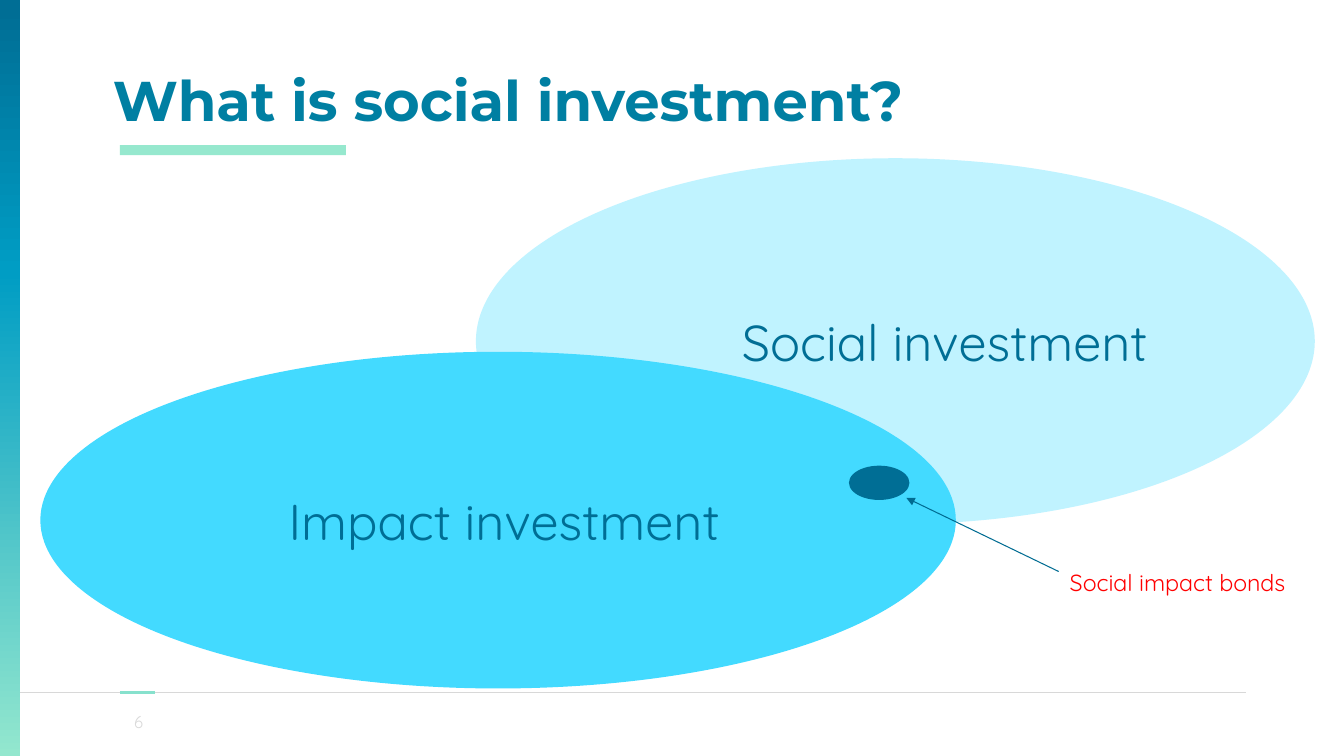
from lxml import etree
from pptx import Presentation
from pptx.dml.color import RGBColor
from pptx.enum import shapes, text
from pptx.oxml import parse_xml
from pptx.oxml.ns import nsdecls, qn
from pptx.util import Inches, Pt

TEAL = RGBColor(0x00, 0x7F, 0xA2)
DEEP = RGBColor(0x00, 0x6E, 0x95)
ARROW = RGBColor(0x00, 0x6C, 0x92)
PALE = RGBColor(0xC0, 0xF3, 0xFF)
SKY = RGBColor(0x43, 0xDA, 0xFF)
MINT = RGBColor(0x96, 0xE8, 0xCE)
MINT_DARK = RGBColor(0x87, 0xE1, 0xCD)
GREY = RGBColor(0xD8, 0xD8, 0xD8)
PAGE_GREY = RGBColor(0xD9, 0xD9, 0xD9)
RED = RGBColor(0xFF, 0x00, 0x00)
BAR_STOPS = [(0, RGBColor(0x93, 0xE7, 0xCE)), (64, RGBColor(0x00, 0x9D, 0xC4)), (99, DEEP), (100, DEEP)]

LEFT, CENTER = text.PP_ALIGN.LEFT, text.PP_ALIGN.CENTER
TOP, MIDDLE, BOTTOM = text.MSO_ANCHOR.TOP, text.MSO_ANCHOR.MIDDLE, text.MSO_ANCHOR.BOTTOM


def add_block(s, kind, box, color):
    sp = s.shapes.add_shape(kind, *map(Inches, box))
    sp.shadow.inherit = False
    sp.fill.solid()
    sp.fill.fore_color.rgb = color
    sp.line.fill.background()
    return sp


def add_line(s, start, end, color, width):
    line = s.shapes.add_connector(shapes.MSO_CONNECTOR.STRAIGHT, *map(Inches, start + end))
    line.line.color.rgb = color
    line.line.width = Pt(width)
    etree.SubElement(line._element.spPr, qn("a:effectLst"))
    return line


def set_text(sp, words, size, color, font="Quicksand", align=LEFT, anchor=TOP,
             left=0.1, margin=0.05):
    tf = sp.text_frame
    tf.word_wrap = True
    tf.vertical_anchor = anchor
    tf.margin_left, tf.margin_right = Inches(left), Inches(0.1)
    tf.margin_top = tf.margin_bottom = Inches(margin)
    p = tf.paragraphs[0]
    p.text = words
    p.alignment = align
    p.font.name = font
    p.font.size = Pt(size)
    p.font.color.rgb = color
    return p


def add_text(s, box, *args, **kwargs):
    return set_text(s.shapes.add_textbox(*map(Inches, box)), *args, **kwargs)


def add_side_bar(s, box):
    bar = add_block(s, shapes.MSO_SHAPE.RECTANGLE, box, DEEP)
    bar.fill.gradient()
    bar.fill.gradient_angle = 90
    stops = bar._element.spPr.find(qn("a:gradFill")).find(qn("a:gsLst"))
    for gs in list(stops):
        stops.remove(gs)
    for pos, color in BAR_STOPS:
        stops.append(parse_xml(
            f'<a:gs {nsdecls("a")} pos="{pos * 1000}"><a:srgbClr val="{color}"/></a:gs>'))


def add_footer(s, x, y, right):
    add_line(s, (0, y), (right, y), GREY, 0.75)
    add_line(s, (x, y), (x + 0.35, y), MINT_DARK, 2.75)
    add_text(s, (x - 0.08, y + 0.09, 0.53, 0.4), "6", 12, PAGE_GREY, align=CENTER, anchor=MIDDLE)


def add_title(s, x, y, w, h):
    add_block(s, shapes.MSO_SHAPE.RECTANGLE, (x + 0.17, y + h + 0.03, 2.24, 0.1), MINT)
    p = add_text(s, (x, y, w, h), "What is social investment?", 40, TEAL,
                 font="Montserrat", anchor=BOTTOM, margin=0.1)
    p.font.bold = True
    p.line_spacing = 0.8


def add_venn(s, x, y):
    oval = shapes.MSO_SHAPE.OVAL
    social = add_block(s, oval, (x + 4.32, y, 8.32, 3.63), PALE)
    set_text(social, "Social investment", 36, DEEP, anchor=MIDDLE, left=1.42)
    impact = add_block(s, oval, (x, y + 1.92, 9.08, 3.34), SKY)
    set_text(impact, "Impact investment", 36, DEEP, align=CENTER, anchor=MIDDLE, left=0.22)
    add_block(s, oval, (x + 8.02, y + 3.05, 0.6, 0.34), DEEP)

    p = add_text(s, (x + 9.99, y + 3.96, 2.54, 0.6), "Social impact bonds", 16.6, RED, left=0.22)
    p.line_spacing = 1.2
    p.space_before = Pt(6)
    arrow = add_line(s, (x + 10.1, y + 4.1), (x + 8.59, y + 3.37), ARROW, 0.75)
    etree.SubElement(arrow.line._get_or_add_ln(), qn("a:tailEnd"), type="triangle")


def main():
    prs = Presentation()
    prs.slide_width, prs.slide_height = Inches(13.33), Inches(7.5)
    s = prs.slides.add_slide(prs.slide_layouts[6])
    add_footer(s, 1.19, 6.87, 12.36)
    add_side_bar(s, (0, 0, 0.2, 7.5))
    add_title(s, 1.02, 0, 11.39, 1.41)
    add_venn(s, 0.4, 1.57)
    prs.save("out.pptx")


if __name__ == "__main__":
    main()
